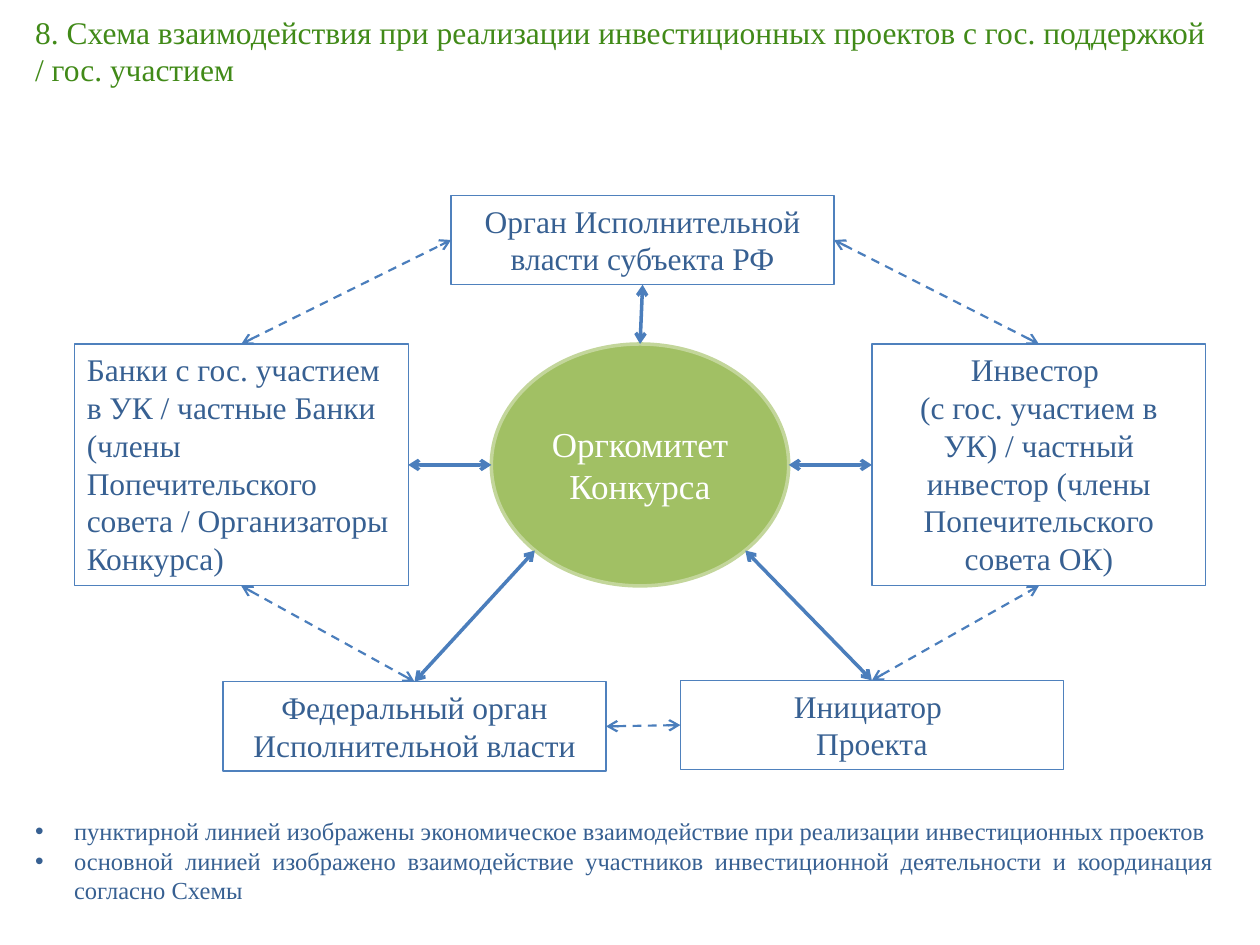
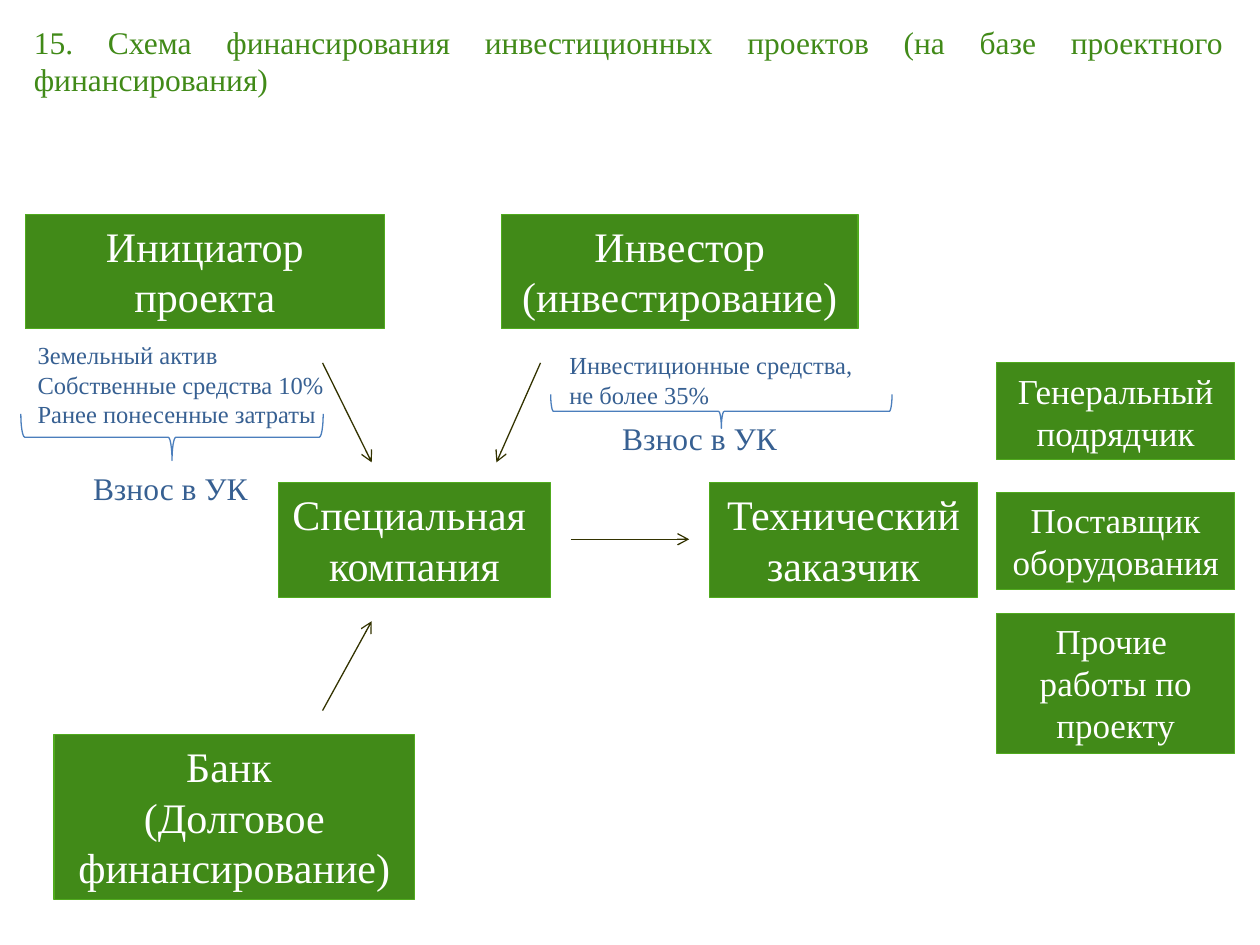
import pptx
import pptx.util
import pptx.dml.color
import pptx.enum.dml
import pptx.enum.shapes
import pptx.enum.text
import pptx.oxml.ns
from lxml import etree

Inches = pptx.util.Inches
Pt = pptx.util.Pt
RGBColor = pptx.dml.color.RGBColor
MSO_SHAPE = pptx.enum.shapes.MSO_SHAPE
ANCHOR = pptx.enum.text.MSO_ANCHOR
ALIGN = pptx.enum.text.PP_ALIGN
DASH = pptx.enum.dml.MSO_LINE.DASH
qn = pptx.oxml.ns.qn

FONT = "Times New Roman"
GREEN = RGBColor(0x41, 0x8A, 0x18)
GREEN_EDGE = RGBColor(0x50, 0xAA, 0x1E)
OLIVE = RGBColor(0xA1, 0xC0, 0x64)
OLIVE_EDGE = RGBColor(0xC3, 0xD6, 0x9B)
BLUE_TEXT = RGBColor(0x37, 0x60, 0x92)
BLUE_EDGE = RGBColor(0x4F, 0x81, 0xBD)
BLUE_LINE = RGBColor(0x4B, 0x7E, 0xBC)
DARK_LINE = RGBColor(0x33, 0x33, 0x00)
WHITE = RGBColor(0xFF, 0xFF, 0xFF)

SCHEME_TITLE = "8. Схема взаимодействия при реализации инвестиционных проектов с гос. поддержкой / гос. участием"
PARTIES = {
    "initiator": (["Инициатор ", "Проекта"], ALIGN.CENTER, (5.4, 5.4, 3.04, 0.71)),
    "region": (["Орган Исполнительной власти субъекта РФ"], ALIGN.CENTER, (3.58, 1.55, 3.04, 0.71)),
    "federal": (["Федеральный орган Исполнительной власти"], ALIGN.CENTER, (1.77, 5.41, 3.04, 0.71)),
    "investor": (["Инвестор ", "(с гос. участием в УК) / частный инвестор (члены Попечительского совета ОК)"],
                 ALIGN.CENTER, (6.92, 2.73, 2.65, 1.92)),
    "banks": (["Банки с гос. участием в УК / частные Банки (члены Попечительского совета / Организаторы Конкурса)"],
              ALIGN.LEFT, (0.59, 2.73, 2.65, 1.92)),
}
COMMITTEE = (["Оргкомитет Конкурса"], (3.9, 2.73, 2.36, 1.92))
ECONOMIC_LINKS = [
    ("banks", "top", "region", "left"),
    ("banks", "bottom", "federal", "top"),
    ("federal", "right", "initiator", "left"),
    ("initiator", "top", "investor", "bottom"),
    ("region", "right", "investor", "top"),
]
MAIN_LINKS = [
    ("region", "bottom", "committee", "top"),
    ("committee", "right", "investor", "left"),
    ("committee", "lower right", "initiator", "top"),
    ("committee", "lower left", "federal", "top"),
    ("committee", "left", "banks", "right"),
]
LEGEND = [
    "пунктирной линией изображены экономическое взаимодействие при реализации инвестиционных проектов",
    "основной линией изображено взаимодействие участников инвестиционной деятельности и координация согласно Схемы",
]

FINANCE_TITLE = "15. Схема финансирования инвестиционных проектов (на базе проектного финансирования)"
MEMBERS = [
    (["Инициатор проекта"], (0.2, 1.7, 2.85, 0.91)),
    (["Инвестор", "(инвестирование)"], (3.98, 1.7, 2.83, 0.91)),
    (["Специальная ", "компания"], (2.21, 3.83, 2.16, 0.91)),
    (["Банк ", "(Долговое финансирование)"], (0.43, 5.83, 2.86, 1.31)),
    (["Технический заказчик"], (5.63, 3.83, 2.13, 0.91)),
]
CONTRACTORS = [
    (["Генеральный", "подрядчик"], (7.91, 2.88, 1.89, 0.77)),
    (["Поставщик", "оборудования"], (7.91, 3.91, 1.89, 0.77)),
    (["Прочие ", "работы по проекту"], (7.91, 4.87, 1.89, 1.11)),
]
FLOWS = [
    ((2.56, 2.88), (2.95, 3.67)),
    ((4.29, 2.88), (3.94, 3.67)),
    ((2.56, 5.64), (2.95, 4.93)),
    ((4.53, 4.28), (5.47, 4.28)),
]
CONTRIBUTIONS = [
    (["Земельный актив", "Собственные средства 10%", "Ранее понесенные затраты"], 14, (0.2, 2.65, 2.54, 0.81)),
    (["Инвестиционные средства,", "не более 35%"], 14, (4.42, 2.73, 2.52, 0.57)),
    (["Взнос в УК"], 18, (0.64, 3.67, 1.44, 0.4)),
    (["Взнос в УК"], 18, (4.84, 3.28, 1.44, 0.4)),
]
BRACES = [(1.18, 2.27, 0.37, 2.4), (5.59, 1.91, 0.27, 2.71)]

SITES = {"top": 0, "left": 1, "bottom": 2, "right": 3}
PLACES = {
    "top": (0.5, 0), "left": (0, 0.5), "bottom": (0.5, 1), "right": (1, 0.5),
    "lower left": (0.146, 0.854), "lower right": (0.854, 0.854),
}


def write(sp, lines, size, color, align=ALIGN.LEFT, wrap=True, anchor=ANCHOR.TOP, bullets=False):
    tf = sp.text_frame
    tf.word_wrap = wrap
    tf.vertical_anchor = anchor
    tf.text = "\n".join(lines)
    for p in tf.paragraphs:
        p.alignment = align
        if bullets:
            pPr = p._p.get_or_add_pPr()
            pPr.set("marL", str(Inches(0.31)))
            pPr.set("indent", str(-Inches(0.31)))
            etree.SubElement(pPr, qn("a:buFont")).set("typeface", "Arial")
            etree.SubElement(pPr, qn("a:buChar")).set("char", "•")
        for r in p.runs:
            r.font.name = FONT
            r.font.size = Pt(size)
            r.font.color.rgb = color


def add_text(s, box, lines, size, color, **style):
    sp = s.shapes.add_textbox(*map(Inches, box))
    write(sp, lines, size, color, **style)


def add_figure(s, kind, box, edge, width=0.75, fill=None):
    sp = s.shapes.add_shape(kind, *map(Inches, box))
    sp.shadow.inherit = False
    if fill is None:
        sp.fill.background()
    else:
        sp.fill.solid()
        sp.fill.fore_color.rgb = fill
    sp.line.color.rgb = edge
    sp.line.width = Pt(width)
    return sp


def add_line(s, start, end, color, width, dash=None, both_ends=False):
    c = s.shapes.add_connector(pptx.enum.shapes.MSO_CONNECTOR.STRAIGHT, *start, *end)
    c.line.color.rgb = color
    c.line.width = Pt(width)
    if dash:
        c.line.dash_style = dash
    spPr = c._element.spPr
    ln = spPr.find(qn("a:ln"))
    for tag in ("a:headEnd", "a:tailEnd") if both_ends else ("a:tailEnd",):
        etree.SubElement(ln, qn(tag)).set("type", "arrow")
    etree.SubElement(spPr, qn("a:effectLst"))
    return c


def place_on(sp, place):
    fx, fy = PLACES[place]
    return round(sp.left + sp.width * fx), round(sp.top + sp.height * fy)


def link(s, first, first_place, second, second_place, width, dash=None):
    c = add_line(s, place_on(first, first_place), place_on(second, second_place),
                 BLUE_LINE, width, dash, both_ends=True)
    for join, sp, place in ((c.begin_connect, first, first_place), (c.end_connect, second, second_place)):
        if sp.auto_shape_type == MSO_SHAPE.RECTANGLE or place == "top":
            join(sp, SITES[place])


def add_slide(prs, title, box, align):
    s = prs.slides.add_slide(prs.slide_layouts[6])
    add_text(s, box, [title], 18, GREEN, align=align)
    return s


def build_interaction(prs):
    s = add_slide(prs, SCHEME_TITLE, (0.18, 0.05, 9.55, 0.71), ALIGN.LEFT)
    nodes = {}
    for name, (lines, align, box) in PARTIES.items():
        nodes[name] = add_figure(s, MSO_SHAPE.RECTANGLE, box, BLUE_EDGE)
        write(nodes[name], lines, 18, BLUE_TEXT, align=align)
    lines, box = COMMITTEE
    nodes["committee"] = add_figure(s, MSO_SHAPE.OVAL, box, OLIVE_EDGE, 2, OLIVE)
    write(nodes["committee"], lines, 20, WHITE, align=ALIGN.CENTER, anchor=ANCHOR.MIDDLE)
    for links, width, dash in ((ECONOMIC_LINKS, 1.25, DASH), (MAIN_LINKS, 2, None)):
        for first, first_place, second, second_place in links:
            link(s, nodes[first], first_place, nodes[second], second_place, width, dash)
    add_text(s, (0.18, 6.43, 9.55, 0.81), LEGEND, 14, BLUE_TEXT, align=ALIGN.JUSTIFY, bullets=True)


def build_financing(prs):
    s = add_slide(prs, FINANCE_TITLE, (0.17, 0.13, 9.64, 0.71), ALIGN.JUSTIFY)
    for group, size in ((MEMBERS, 24), (CONTRACTORS, 20)):
        for lines, box in group:
            sp = add_figure(s, MSO_SHAPE.RECTANGLE, box, GREEN_EDGE, fill=GREEN)
            write(sp, lines, size, WHITE, align=ALIGN.CENTER)
    for start, end in FLOWS:
        add_line(s, map(Inches, start), map(Inches, end), DARK_LINE, 0.75)
    for lines, size, box in CONTRIBUTIONS:
        add_text(s, box, lines, size, BLUE_TEXT, wrap=False)
    for box in BRACES:
        add_figure(s, MSO_SHAPE.RIGHT_BRACE, box, BLUE_LINE).rotation = 90


def main():
    prs = pptx.Presentation()
    prs.slide_width = Inches(10)
    prs.slide_height = Inches(7.5)
    build_interaction(prs)
    build_financing(prs)
    prs.save("out.pptx")


if __name__ == "__main__":
    main()
